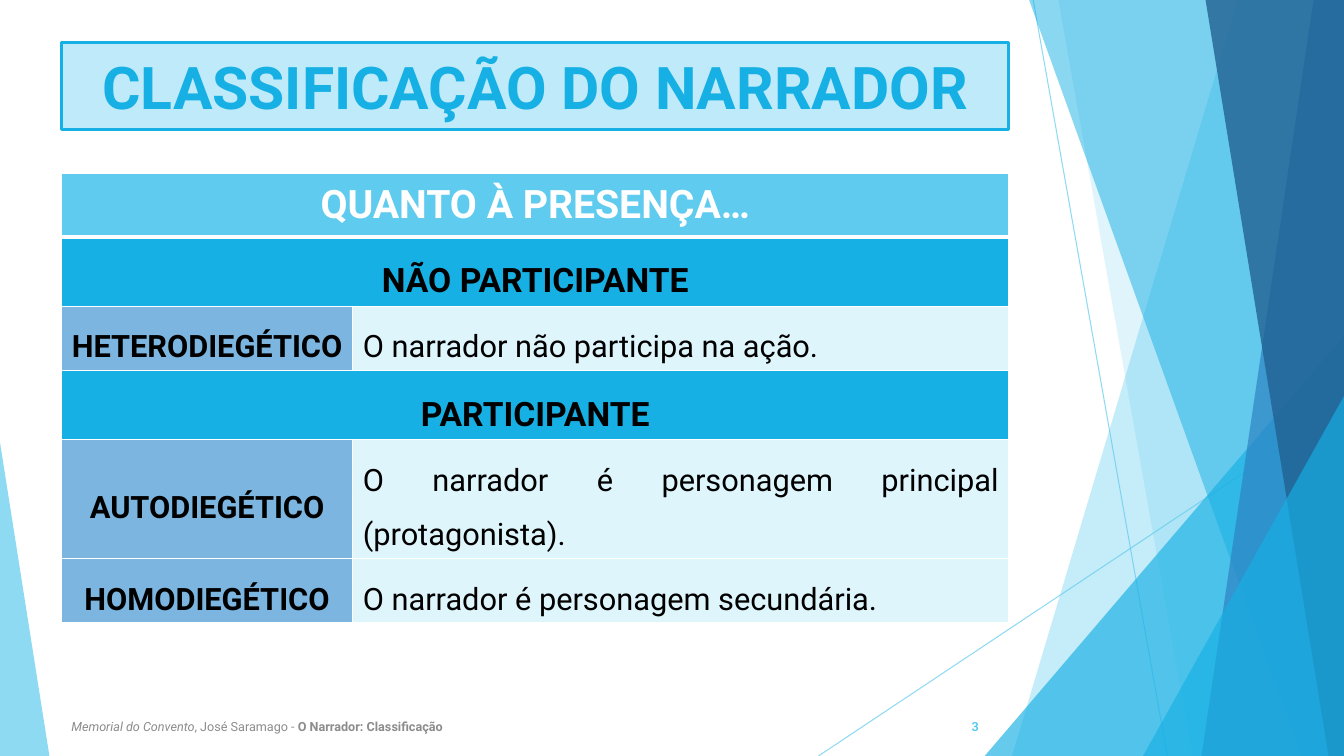
from pptx import Presentation
from pptx.dml.color import RGBColor
from pptx.enum import shapes, text
from pptx.oxml import ns, xmlchemy as xml
from pptx.util import Pt
from lxml import etree

SKY = RGBColor(0x5F, 0xCB, 0xEF)
CYAN = RGBColor(0x17, 0xB0, 0xE4)
BLUE = RGBColor(0x2E, 0x83, 0xC3)
NAVY = RGBColor(0x22, 0x62, 0x92)
PALE = RGBColor(0xBF, 0xEA, 0xF9)
STEEL = RGBColor(0x7C, 0xB5, 0xE0)
ICE = RGBColor(0xDF, 0xF5, 0xFC)
GREY = RGBColor(0x8C, 0x8C, 0x8C)
WHITE = RGBColor(255, 255, 255)
BLACK = RGBColor(0, 0, 0)
FONT = "Roboto"
WIDE, HIGH = 960, 540
LEFT, CENTER, RIGHT, FULL = (text.PP_ALIGN.LEFT, text.PP_ALIGN.CENTER,
                             text.PP_ALIGN.RIGHT, text.PP_ALIGN.JUSTIFY)
TOP, MIDDLE = text.MSO_ANCHOR.TOP, text.MSO_ANCHOR.MIDDLE

RAYS = [(738, 0, 833.8, HIGH), (WIDE, 290.2, 584.6, HIGH)]
SHARDS = [
    ("band", (884.2, 722.9), SKY, 36),
    ("band", (756, 851.8), SKY, 20),
    ("peak", (703.4, 239.8, 256.6, 1), CYAN, 66),
    ("band", (735.1, 929.5), CYAN, 50),
    ("band", (938.2, 858.2), BLUE, 70),
    ("band", (861.1, 949), NAVY, 80),
    ("peak", (816.5, 283, 143.5, 1), CYAN, 66),
    ("peak", (0, 316.1, 35.3, 0), SKY, 70),
]
TITLE = "CLASSIFICAÇÃO DO NARRADOR"
SOURCE = [("Memorial do Convento", False, True),
          (", José Saramago - ", False, False),
          ("O Narrador: Classificação", True, False)]
NUMBER = "3"
ROWS = [
    (45.4, ["QUANTO À PRESENÇA…"], MIDDLE, LEFT),
    (49.4, ["NÃO PARTICIPANTE"], TOP, LEFT),
    (45.9, ["HETERODIEGÉTICO", "O narrador não participa na ação."], TOP, LEFT),
    (49.4, ["PARTICIPANTE"], TOP, LEFT),
    (84.5, ["AUTODIEGÉTICO",
            "O narrador é personagem principal (protagonista)."], MIDDLE, FULL),
    (45.9, ["HOMODIEGÉTICO", "O narrador é personagem secundária."], TOP, LEFT),
]
COLS = [208.1, 468.7]
EDGE, SPAN = 43.9, sum(COLS)

deck = Presentation()
deck.slide_width, deck.slide_height = Pt(WIDE), Pt(HIGH)
slide = deck.slides.add_slide(deck.slide_layouts[6])
items = slide.shapes


def fade(fill, share):
    color = fill._xPr.find(".//" + ns.qn("a:srgbClr"))
    etree.SubElement(color, ns.qn("a:alpha")).set("val", str(share * 1000))


def write(frame, runs, size, color, align, anchor=MIDDLE, space=None):
    frame.word_wrap = True
    frame.vertical_anchor = anchor
    para = frame.paragraphs[0]
    para.alignment = align
    if space:
        para.line_spacing = space
    for words, bold, slant in runs:
        run = para.add_run()
        run.text = words
        font = run.font
        font.name, font.size, font.bold, font.italic = FONT, Pt(size), bold, slant
        font.color.rgb = color


def border(cell, low):
    props = cell._tc.get_or_add_tcPr()
    for spot, (side, width) in enumerate(
            [("lnL", 1), ("lnR", 1), ("lnT", 1), ("lnB", low)]):
        line = etree.Element(ns.qn("a:" + side), w=str(Pt(width)))
        fill = etree.SubElement(line, ns.qn("a:solidFill"))
        etree.SubElement(fill, ns.qn("a:srgbClr"), val=str(WHITE))
        props.insert(spot, line)


def draw_rays():
    for ray in RAYS:
        line = items.add_connector(shapes.MSO_CONNECTOR.STRAIGHT, *map(Pt, ray))
        line.line.color.rgb = SKY
        line.line.width = Pt(0.75)
        fade(line.line.fill, 70)
        etree.SubElement(line._element.spPr, ns.qn("a:effectLst"))


def draw_shards():
    for kind, place, color, share in SHARDS:
        if kind == "band":
            high, low = place
            pen = items.build_freeform(Pt(high), 0)
            pen.add_line_segments([(Pt(WIDE), 0), (Pt(WIDE), Pt(HIGH)),
                                   (Pt(low), Pt(HIGH))], close=True)
            shard = pen.convert_to_shape()
        else:
            left, top, width, tip = place
            shard = items.add_shape(shapes.MSO_SHAPE.ISOSCELES_TRIANGLE, Pt(left),
                                    Pt(top), Pt(width), Pt(HIGH - top))
            shard.adjustments[0] = tip
        shard.shadow.inherit = False
        shard.line.fill.background()
        shard.fill.solid()
        shard.fill.fore_color.rgb = color
        fade(shard.fill, share)


def draw_title():
    box = items.add_shape(shapes.MSO_SHAPE.RECTANGLE, Pt(EDGE), Pt(30.2),
                          Pt(SPAN), Pt(62.6))
    box.shadow.inherit = False
    box.fill.solid()
    box.fill.fore_color.rgb = PALE
    box.line.color.rgb = CYAN
    box.line.width = Pt(2.25)
    write(box.text_frame, [(TITLE, True, False)], 42, CYAN, CENTER)


def draw_table():
    tall = sum(row[0] for row in ROWS)
    grid = items.add_table(len(ROWS), len(COLS), Pt(EDGE), Pt(123.8),
                           Pt(SPAN), Pt(tall)).table
    for col, width in zip(grid.columns, COLS):
        col.width = Pt(width)
    for r, (height, words, anchor, align) in enumerate(ROWS):
        grid.rows[r].height = Pt(height)
        head, whole = r == 0, len(words) == 1
        if whole:
            grid.cell(r, 0).merge(grid.cell(r, 1))
        for c in range(len(COLS)):
            cell = grid.cell(r, c)
            cell.fill.solid()
            cell.fill.fore_color.rgb = (SKY if head else CYAN if whole
                                        else (STEEL, ICE)[c])
            border(cell, 3 if head else 1)
            if c < len(words):
                size = 28 if head else 24 if whole else 22
                place = TOP if c else anchor
                write(cell.text_frame, [(words[c], c == 0, False)], size,
                      WHITE if head else BLACK, align if c else CENTER,
                      place, None if head else 1.5)
                cell.vertical_anchor = place


def draw_foot():
    for left, width, runs, color, align in [
            (EDGE, 496.1, SOURCE, GREY, LEFT),
            (652.3, 54, [(NUMBER, True, False)], SKY, RIGHT)]:
        box = items.add_textbox(Pt(left), Pt(504.7), Pt(width), Pt(28.8))
        write(box.text_frame, runs, 9, color, align)


draw_rays()
draw_shards()
draw_title()
draw_table()
draw_foot()
deck.save("out.pptx")
